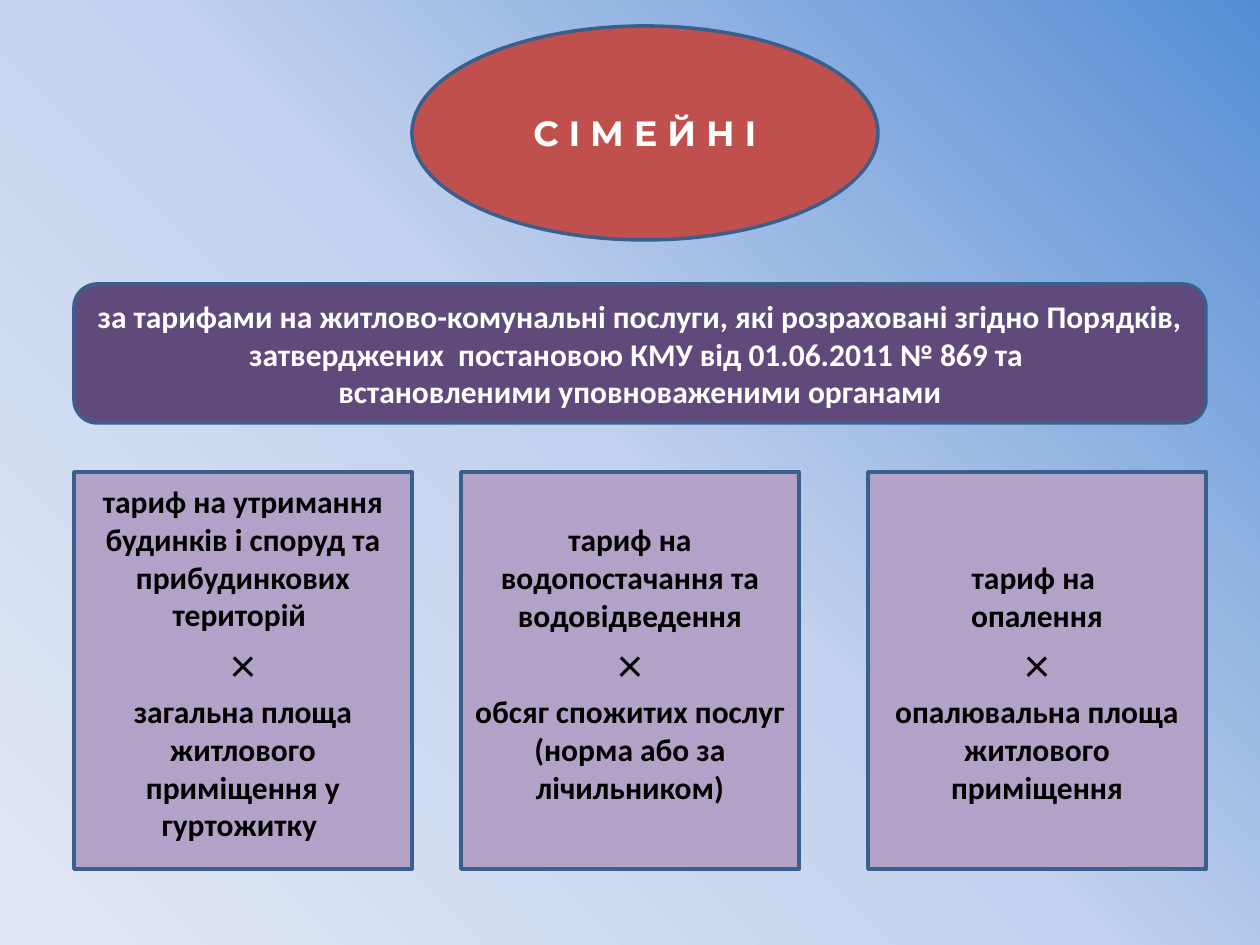
from copy import deepcopy

from pptx import Presentation
from pptx.dml.color import RGBColor
from pptx.enum.shapes import MSO_SHAPE
from pptx.enum.text import MSO_ANCHOR, PP_ALIGN
from pptx.oxml.ns import qn
from pptx.util import Pt

SCALE = 914400 / 126
EDGE = "3A5F8C"
ROW = 38  # height of an 18 pt line


def px(n):
    return round(n * SCALE)


def tint(code):
    return RGBColor.from_string(code)


def paint(slide, stops):
    """Fill the background with a gradient towards the lower left."""
    fill = slide.background.fill
    fill.gradient()
    fill.gradient_angle = 225
    marks = slide.element.find(".//" + qn("a:gsLst"))
    while len(marks) < len(stops):
        marks.append(deepcopy(marks[-1]))
    for mark, (place, code) in zip(fill.gradient_stops, stops):
        mark.position = place
        mark.color.rgb = tint(code)


def panel(slide, kind, box, code):
    """Add an outlined shape and return its text frame."""
    shape = slide.shapes.add_shape(kind, *map(px, box))
    shape.shadow.inherit = False
    shape.fill.solid()
    shape.fill.fore_color.rgb = tint(code)
    shape.line.color.rgb = tint(EDGE)
    shape.line.width = Pt(2)
    frame = shape.text_frame
    frame.word_wrap = True
    frame.vertical_anchor = MSO_ANCHOR.MIDDLE
    return frame


def style(part, code, size=18, bold=True, face="Calibri"):
    part.alignment = PP_ALIGN.CENTER
    for run in part.runs:
        run.font.name = face
        run.font.size = Pt(size)
        run.font.bold = bold
        run.font.color.rgb = tint(code)


def title(slide, box, text):
    frame = panel(slide, MSO_SHAPE.OVAL, box, "C0504D")
    frame.text = text
    style(frame.paragraphs[0], "FFFFFF", 20, face="Montserrat")


def banner(slide, box, text):
    frame = panel(slide, MSO_SHAPE.ROUNDED_RECTANGLE, box, "604A7B")
    frame.text = text
    for part in frame.paragraphs:
        style(part, "FFFFFF")


def card(slide, box, rows, rate, amount):
    """Rate times amount; the rate takes rows lines and ends at a shared level."""
    frame = panel(slide, MSO_SHAPE.RECTANGLE, box, "B3A2C7")
    frame.vertical_anchor = MSO_ANCHOR.TOP
    frame.margin_top = px(10 + ROW * (4 - rows))
    frame.text = "\n".join([rate, "×", amount])
    for part in frame.paragraphs:
        sign = part.text == "×"
        style(part, "000000", 28 if sign else 18, not sign)


def cards(slide, box, wide, items):
    left, top, _, high = box
    for shift, rows, rate, amount in items:
        card(slide, (left + shift, top, wide, high), rows, rate, amount)


def main():
    deck = Presentation()
    deck.slide_width, deck.slide_height = px(1260), px(945)
    slide = deck.slides.add_slide(deck.slide_layouts[6])
    paint(slide, [(0, "558ED5"), (0.5, "C2D1ED"), (1, "E1E8F5")])

    # Heading
    title(slide, (412, 26, 466, 214), "С І М Е Й Н І")

    # Basis of the rates
    banner(slide, (74, 284, 1132, 139),
           "за тарифами на житлово-комунальні послуги, які розраховані згідно "
           "Порядків, затверджених  постановою КМУ від 01.06.2011 № 869 та \n"
           "встановленими уповноваженими органами")

    # Formulas: shift, lines of the rate, rate, amount
    cards(slide, (74, 472, 1132, 397), 338, [
        (0, 4, "тариф на утримання будинків і споруд та прибудинкових територій ",
         "загальна площа житлового приміщення у гуртожитку "),
        (387, 3, "тариф на водопостачання та водовідведення",
         "обсяг спожитих послуг \n(норма або за лічильником)"),
        (794, 2, "тариф на \nопалення",
         "опалювальна площа житлового приміщення"),
    ])
    deck.save("out.pptx")


if __name__ == "__main__":
    main()
